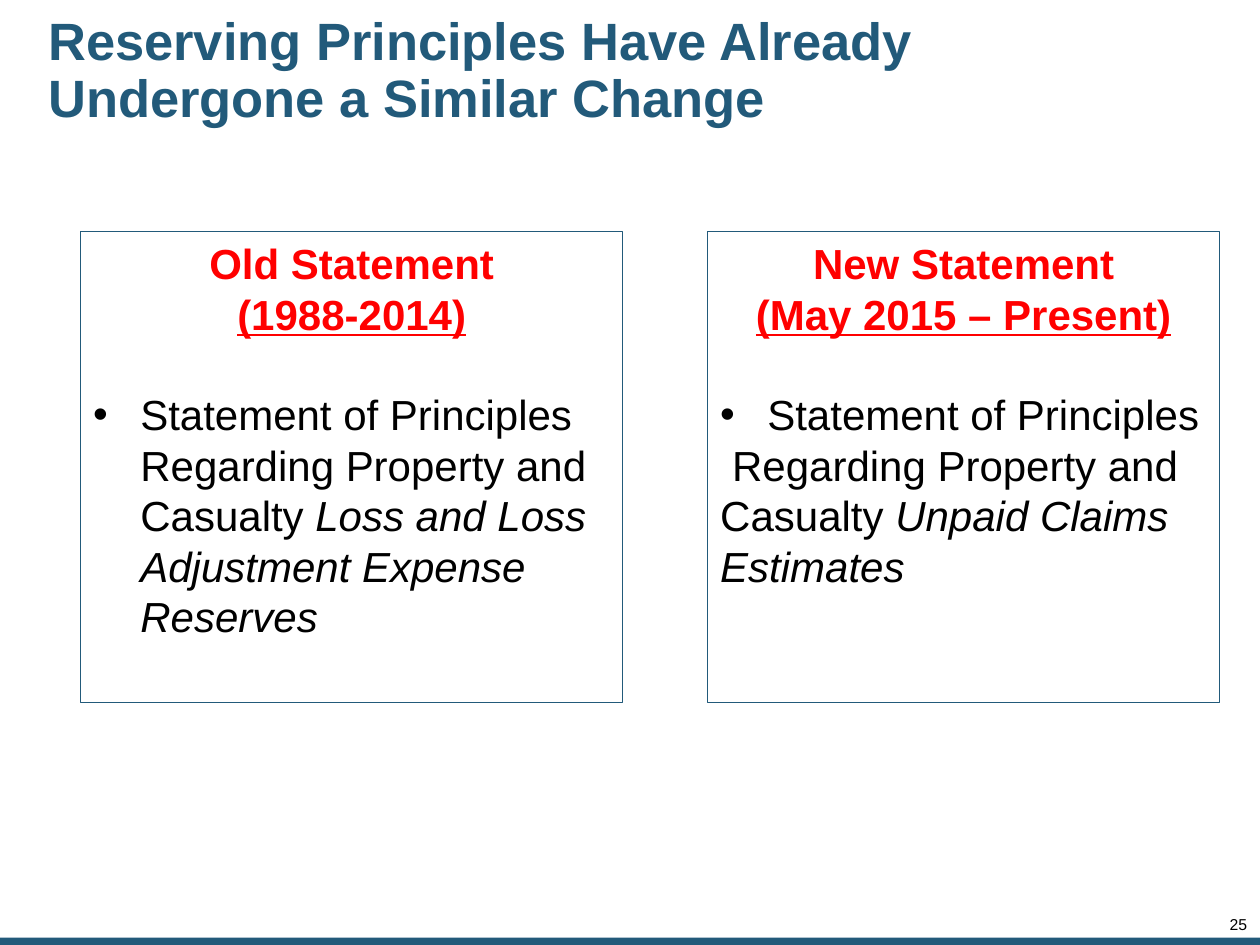
from lxml import etree
from pptx import Presentation
from pptx.dml.color import RGBColor
from pptx.enum.shapes import MSO_SHAPE
from pptx.enum.text import MSO_ANCHOR, MSO_AUTO_SIZE, PP_ALIGN
from pptx.oxml.ns import qn
from pptx.util import Cm, Pt

RECTANGLE = MSO_SHAPE.RECTANGLE
TOP, MIDDLE = MSO_ANCHOR.TOP, MSO_ANCHOR.MIDDLE
LEFT, CENTER, RIGHT = PP_ALIGN.LEFT, PP_ALIGN.CENTER, PP_ALIGN.RIGHT
TEAL = RGBColor(0x22, 0x5A, 0x7A)
RED = RGBColor(0xFF, 0x00, 0x00)
BLACK = RGBColor(0x00, 0x00, 0x00)
FONT = "Arial"

TITLE = "Reserving Principles Have Already Undergone a Similar Change"
PAGE_NUMBER = "25"

# Body paragraphs: (bulleted, left margin cm, first-line indent cm, plain text, italic text)
STATEMENTS = [
    {
        "left": 1.63, "width": 10.92,
        "heading": "Old Statement", "period": "(1988-2014)",
        "body": [(True, 0.95, -0.95,
                  "Statement of Principles Regarding Property and Casualty ",
                  "Loss and Loss Adjustment Expense Reserves")],
    },
    {
        "left": 14.27, "width": 10.31,
        "heading": "New Statement", "period": "(May 2015 – Present)",
        "body": [(True, 0.95, -0.95, "Statement of Principles", ""),
                 (False, 0, 0.24, "Regarding Property and Casualty ",
                  "Unpaid Claims Estimates")],
    },
]
STATEMENT_TOP, STATEMENT_HEIGHT = 4.67, 9.5
BODY_GAP = Pt(28.7)

SLIDE_WIDTH, SLIDE_HEIGHT = 25.4, 19.05
FOOTER_HEIGHT = 0.15


def add_run(paragraph, text, size, color, bold=False, italic=False, underline=False):
    run = paragraph.add_run()
    run.text = text
    font = run.font
    font.name, font.size, font.color.rgb = FONT, Pt(size), color
    font.bold, font.italic, font.underline = bold, italic, underline


def set_indent(paragraph, bulleted, margin, indent):
    properties = paragraph._p.get_or_add_pPr()
    properties.set("marL", str(Cm(margin)))
    properties.set("indent", str(Cm(indent)))
    if bulleted:
        etree.SubElement(properties, qn("a:buFont")).set("typeface", FONT)
        etree.SubElement(properties, qn("a:buChar")).set("char", "•")


def add_rectangle(slide, left, top, width, height):
    rectangle = slide.shapes.add_shape(
        RECTANGLE, Cm(left), Cm(top), Cm(width), Cm(height))
    rectangle.shadow.inherit = False
    return rectangle


def set_margins(frame, margin):
    frame.margin_left = frame.margin_right = Cm(margin)
    frame.margin_top = frame.margin_bottom = Cm(margin)


def add_title(slide):
    title = slide.shapes.title
    title.left, title.top = Cm(0.84), Cm(0.25)
    title.width, title.height = Cm(20.55), Cm(2.39)
    frame = title.text_frame
    frame.word_wrap, frame.auto_size = True, MSO_AUTO_SIZE.NONE
    frame.vertical_anchor = MIDDLE
    set_margins(frame, 0.13)
    paragraph = frame.paragraphs[0]
    paragraph.alignment, paragraph.line_spacing = LEFT, 0.9
    add_run(paragraph, TITLE, 30, TEAL, bold=True)


def add_statement(slide, statement):
    box = add_rectangle(slide, statement["left"], STATEMENT_TOP,
                        statement["width"], STATEMENT_HEIGHT)
    box.fill.background()
    box.line.color.rgb, box.line.width = TEAL, Pt(0.75)
    frame = box.text_frame
    frame.word_wrap, frame.vertical_anchor = True, TOP

    heading = frame.paragraphs[0]
    period = frame.add_paragraph()
    heading.alignment = period.alignment = CENTER
    add_run(heading, statement["heading"], 24, RED, bold=True)
    add_run(period, statement["period"], 24, RED, bold=True, underline=True)

    for index, (bulleted, margin, indent, plain, italic) in enumerate(statement["body"]):
        paragraph = frame.add_paragraph()
        set_indent(paragraph, bulleted, margin, indent)
        paragraph.alignment = LEFT
        if index == 0:
            paragraph.space_before = BODY_GAP
        add_run(paragraph, plain, 24, BLACK)
        if italic:
            add_run(paragraph, italic, 24, BLACK, italic=True)


def add_footer(slide):
    bar = add_rectangle(slide, 0, SLIDE_HEIGHT - FOOTER_HEIGHT, SLIDE_WIDTH, FOOTER_HEIGHT)
    bar.fill.solid()
    bar.fill.fore_color.rgb = TEAL
    bar.line.fill.background()

    number = slide.shapes.add_textbox(Cm(23.9), Cm(18.49), Cm(1.24), Cm(0.33))
    frame = number.text_frame
    frame.word_wrap = True
    set_margins(frame, 0)
    paragraph = frame.paragraphs[0]
    paragraph.alignment, paragraph.line_spacing = RIGHT, 0.85
    add_run(paragraph, PAGE_NUMBER, 9, BLACK)


def main():
    presentation = Presentation()
    presentation.slide_width, presentation.slide_height = Cm(SLIDE_WIDTH), Cm(SLIDE_HEIGHT)
    slide = presentation.slides.add_slide(presentation.slide_layouts.get_by_name("Title Only"))
    add_footer(slide)
    add_title(slide)
    for statement in STATEMENTS:
        add_statement(slide, statement)
    presentation.save("out.pptx")


if __name__ == "__main__":
    main()
